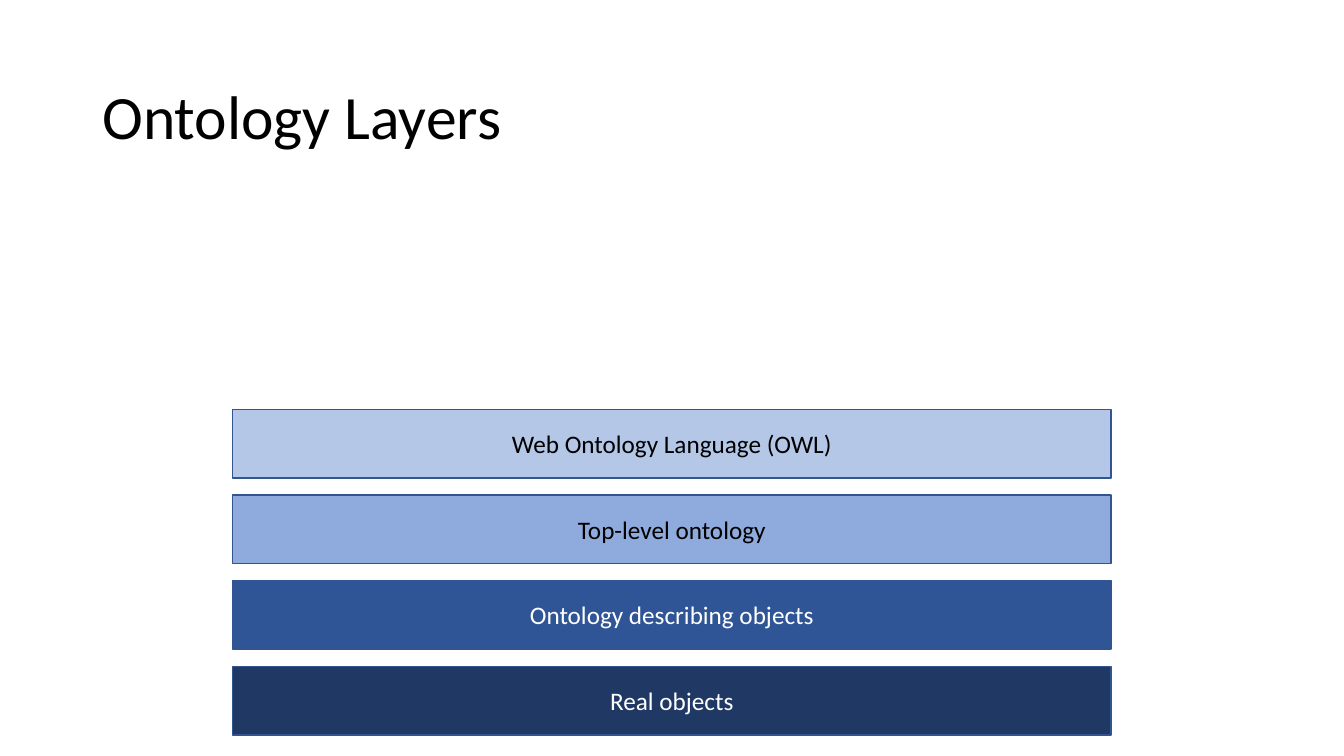
from pptx import Presentation
from pptx.dml.color import RGBColor
from pptx.enum.shapes import MSO_SHAPE
from pptx.enum.text import MSO_ANCHOR, PP_ALIGN
from pptx.util import Pt

RECTANGLE = MSO_SHAPE.RECTANGLE
MIDDLE = MSO_ANCHOR.MIDDLE
LEFT, CENTER = PP_ALIGN.LEFT, PP_ALIGN.CENTER

BLACK = RGBColor(0x00, 0x00, 0x00)
WHITE = RGBColor(0xFF, 0xFF, 0xFF)
OUTLINE = RGBColor(0x32, 0x54, 0x91)
PALE_BLUE = RGBColor(0xB4, 0xC7, 0xE7)
LIGHT_BLUE = RGBColor(0x8F, 0xAA, 0xDC)
DARK_BLUE = RGBColor(0x2F, 0x55, 0x97)
NAVY = RGBColor(0x20, 0x38, 0x64)
FONT = "Calibri"

# Content: layers from top to bottom (text, fill, text colour)
TITLE = "Ontology Layers"
LAYERS = [
    ("Web Ontology Language (OWL)", PALE_BLUE, BLACK),
    ("Top-level ontology", LIGHT_BLUE, BLACK),
    ("Ontology describing objects", DARK_BLUE, WHITE),
    ("Real objects", NAVY, WHITE),
]

# Layout in points
LAYER_LEFT, LAYER_TOP = 166.3, 292.3
LAYER_WIDTH, LAYER_HEIGHT = 627.2, 49
LAYER_STEP = 61.2


def write(box, text, size, color, align, line_spacing=1.0):
    frame = box.text_frame
    frame.word_wrap = True
    frame.vertical_anchor = MIDDLE
    para = frame.paragraphs[0]
    para.alignment = align
    para.line_spacing = line_spacing
    span = para.add_run()
    span.text = text
    span.font.name = FONT
    span.font.size = Pt(size)
    span.font.color.rgb = color


def add_layer(page, index, text, fill, color):
    top = LAYER_TOP + index * LAYER_STEP
    box = page.shapes.add_shape(
        RECTANGLE, Pt(LAYER_LEFT), Pt(top), Pt(LAYER_WIDTH), Pt(LAYER_HEIGHT))
    box.shadow.inherit = False
    box.fill.solid()
    box.fill.fore_color.rgb = fill
    box.line.color.rgb = OUTLINE
    box.line.width = Pt(1)
    write(box, text, 18, color, CENTER)


def main():
    deck = Presentation()
    deck.slide_width, deck.slide_height = Pt(960), Pt(540)
    page = deck.slides.add_slide(deck.slide_layouts[6])

    # Title
    title = page.shapes.add_textbox(Pt(66), Pt(33.1), Pt(828), Pt(104.4))
    write(title, TITLE, 44, BLACK, LEFT, line_spacing=0.9)

    # Stack of layers
    for index, layer in enumerate(LAYERS):
        add_layer(page, index, *layer)

    deck.save("out.pptx")


if __name__ == "__main__":
    main()
